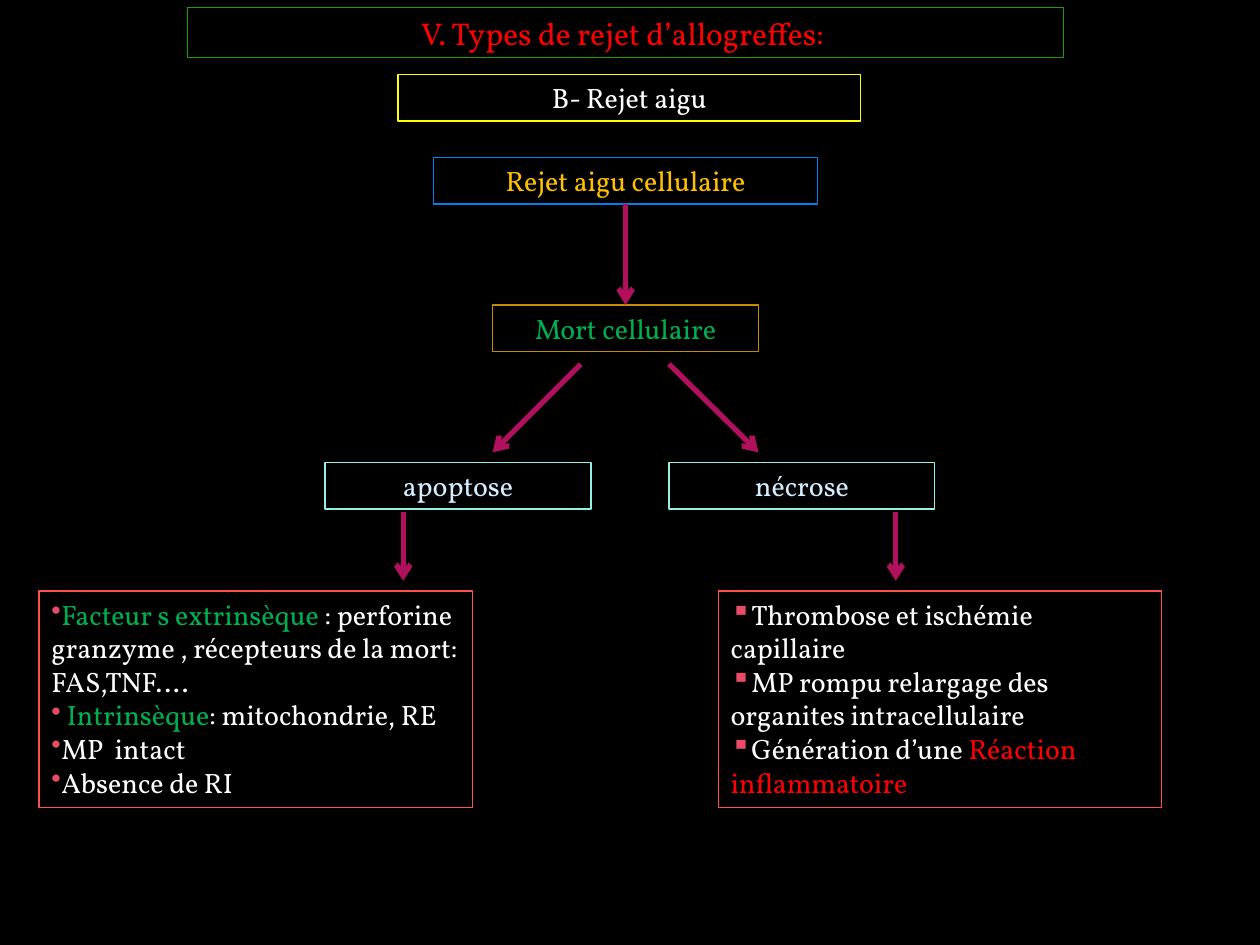
"""Build the slide on cellular acute rejection of allografts."""
from lxml.etree import SubElement
from pptx import Presentation
from pptx.dml.color import RGBColor
from pptx.enum.shapes import MSO_CONNECTOR as CONNECTOR
from pptx.enum.text import MSO_AUTO_SIZE as AUTO_SIZE, PP_ALIGN as ALIGN
from pptx.oxml.ns import qn
from pptx.util import Inches, Pt


def color(value):
    return RGBColor.from_string(value)


def add_box(area, border, paragraphs, size=16, bullet=None):
    box = slide.shapes.add_textbox(*map(Inches, area))
    box.line.color.rgb = color(border)
    box.line.width = Pt(0.75)
    frame = box.text_frame
    frame.word_wrap = True
    frame.auto_size = AUTO_SIZE.SHAPE_TO_FIT_TEXT
    for index, runs in enumerate(paragraphs):
        paragraph = frame.add_paragraph() if index else frame.paragraphs[0]
        paragraph.alignment = ALIGN.LEFT if bullet else ALIGN.CENTER
        if bullet:
            properties = paragraph._p.get_or_add_pPr()
            bullet_color = SubElement(properties, qn("a:buClr"))
            SubElement(bullet_color, qn("a:srgbClr"), val="E74B65")
            SubElement(properties, qn("a:buChar"), char=bullet)
        for text, shade in runs:
            run = paragraph.add_run()
            run.text = text
            run.font.name = "Vollkorn"
            run.font.size = Pt(size)
            run.font.color.rgb = color(shade)
    return box


WHITE, GREEN, RED = "FFFFFF", "00B050", "FF0000"
PALE_BLUE, AQUA, CORAL = "D6ECFF", "94F0E4", "FF5050"

deck = Presentation()
deck.slide_width, deck.slide_height = Inches(10), Inches(7.5)
slide = deck.slides.add_slide(deck.slide_layouts[6])
slide.background.fill.solid()
slide.background.fill.fore_color.rgb = color("000000")

add_box((1.49, 0.06, 6.95, 0.4), "219B11",
        [[("V. Types de rejet d’allogreffes: ", RED)]], size=18)
add_box((3.16, 0.59, 3.67, 0.37), "FFFF00", [[("B- Rejet aigu", WHITE)]])
rejection = add_box((3.44, 1.25, 3.05, 0.37), "007EEB",
                    [[("Rejet aigu cellulaire", "FFC000")]])
cell_death = add_box((3.91, 2.42, 2.11, 0.37), "C58D01",
                     [[("Mort cellulaire", GREEN)]])
for left, death_type in ((5.31, "nécrose"), (2.58, "apoptose")):
    add_box((left, 3.67, 2.11, 0.37), AQUA, [[(death_type, PALE_BLUE)]])

apoptosis_facts = [
    [("Facteur s extrinsèque ", GREEN),
     (": perforine granzyme , récepteurs de la mort: FAS,TNF….", WHITE)],
    [(" ", "C00000"), ("Intrinsèque", GREEN), (": mitochondrie, RE", WHITE)],
    [("MP  intact", WHITE)],
    [("Absence de RI", WHITE)],
]
necrosis_facts = [
    [("Thrombose et ischémie capillaire", WHITE)],
    [("MP rompu relargage des organites intracellulaire", WHITE)],
    [("Génération d’une ", WHITE), ("Réaction inflammatoire", RED)],
]
add_box((0.31, 4.69, 3.44, 1.72), CORAL, apoptosis_facts, bullet="•")
add_box((5.7, 4.69, 3.52, 1.72), CORAL, necrosis_facts, bullet="▪")

arrows = []
for ends in (
    (4.96, 1.62, 4.96, 2.42),
    (5.31, 2.89, 6.02, 3.59),
    (4.61, 2.89, 3.91, 3.59),
    (3.2, 4.06, 3.2, 4.61),
    (7.11, 4.06, 7.11, 4.61),
):
    arrow = slide.shapes.add_connector(CONNECTOR.STRAIGHT, *map(Inches, ends))
    arrow.line.color.rgb = color("B0105C")
    arrow.line.width = Pt(3)
    SubElement(arrow.line._get_or_add_ln(), qn("a:tailEnd"), type="arrow")
    SubElement(arrow._element.spPr, qn("a:effectLst"))
    arrows.append(arrow)
arrows[0].begin_connect(rejection, 2)
arrows[0].end_connect(cell_death, 0)

deck.save("out.pptx")
